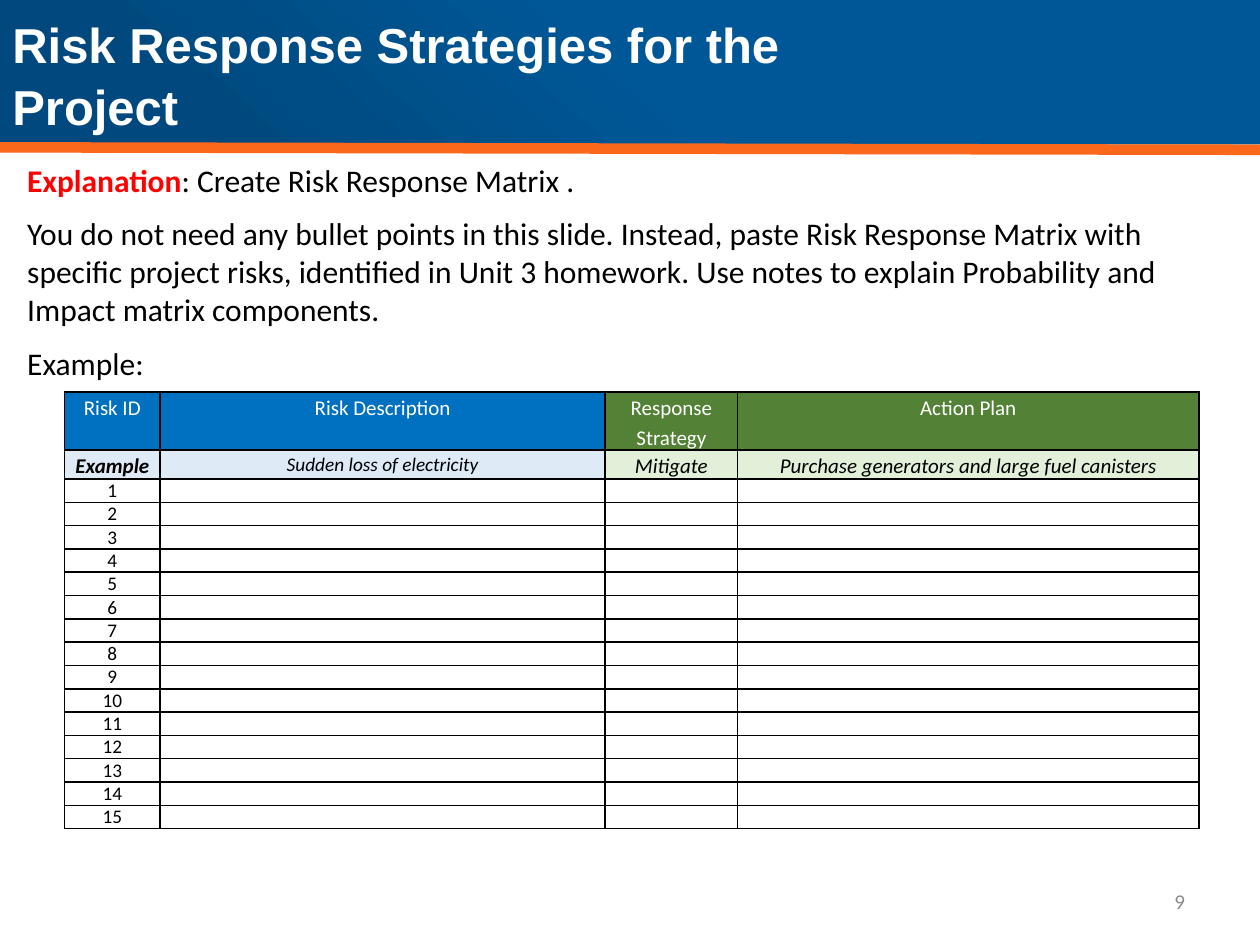
from lxml import etree
from pptx import Presentation
from pptx.dml.color import RGBColor
from pptx.enum import shapes, text
from pptx.oxml import parse_xml
from pptx.oxml.ns import qn
from pptx.util import Cm, Pt

WHITE = RGBColor(0xFF, 0xFF, 0xFF)
BLACK = RGBColor(0, 0, 0)
RED = RGBColor(0xFF, 0, 0)
GRAY = RGBColor(0x8C, 0x8C, 0x8C)
ORANGE = RGBColor(0xFB, 0x68, 0x1B)
NAVY = RGBColor(0x00, 0x57, 0x97)
DEEP = RGBColor(0x00, 0x48, 0x7D)
BLUE = RGBColor(0x00, 0x70, 0xC0)
GREEN = RGBColor(0x53, 0x81, 0x35)
SKY = RGBColor(0xDE, 0xEA, 0xF6)
MINT = RGBColor(0xE2, 0xEF, 0xD9)
NS = 'xmlns:a="http://schemas.openxmlformats.org/drawingml/2006/main"'


def style(font, size, color, bold=False, italic=False, name="Calibri"):
    font.name, font.size = name, Pt(size)
    font.bold, font.italic = bold, italic
    font.color.rgb = color


def add_box(left, top, width, height, anchor):
    box = slide.shapes.add_textbox(Cm(left), Cm(top), Cm(width), Cm(height))
    frame = box.text_frame
    frame.word_wrap = True
    frame.vertical_anchor = anchor
    return frame


prs = Presentation()
prs.slide_width, prs.slide_height = Cm(25.4), Cm(19.05)
slide = prs.slides.add_slide(prs.slide_layouts[6])

band = slide.shapes.add_shape(shapes.MSO_SHAPE.RECTANGLE, 0, 0, Cm(25.4), Cm(2.9))
band.line.fill.background()
band.fill.solid()
stops = "".join(
    f'<a:gs pos="{pos * 1000}"><a:srgbClr val="{tone}"/></a:gs>'
    for pos, tone in ((0, NAVY), (49, NAVY), (85, DEEP))
)
props = band.element.spPr
props.replace(props.find(qn("a:solidFill")), parse_xml(
    f'<a:gradFill {NS}><a:gsLst>{stops}</a:gsLst>'
    f'<a:lin ang="{131 * 60000}" scaled="0"/></a:gradFill>'))
props.append(parse_xml(
    f'<a:effectLst {NS}><a:outerShdw blurRad="{Pt(3.1)}" dist="{Pt(1.8)}" dir="5400000" '
    f'rotWithShape="0"><a:srgbClr val="{BLACK}"><a:alpha val="35000"/></a:srgbClr>'
    f'</a:outerShdw></a:effectLst>'))

rule = slide.shapes.add_connector(
    shapes.MSO_CONNECTOR.STRAIGHT, 0, Cm(2.97), Cm(25.4), Cm(3.02))
rule.line.color.rgb = ORANGE
rule.line.width = Pt(6)
etree.SubElement(rule.element.spPr, qn("a:effectLst"))

title = add_box(0, 0, 19.25, 2.97, text.MSO_ANCHOR.MIDDLE).paragraphs[0]
title.text = "Risk Response Strategies for the Project"
title.line_spacing = 1.05
style(title.font, 28, WHITE, bold=True, name="Arial")

num = add_box(18.21, 17.65, 5.93, 1.02, text.MSO_ANCHOR.MIDDLE).paragraphs[0]
num.text = "9"
num.alignment = text.PP_ALIGN.RIGHT
style(num.font, 12, GRAY)

body = add_box(0.3, 3.12, 24.82, 5.84, text.MSO_ANCHOR.TOP)
lead = body.paragraphs[0]
for words, color, bold in (
    ("Explanation", RED, True),
    (": Create Risk Response Matrix .", BLACK, False),
):
    run = lead.add_run()
    run.text = words
    style(run.font, 18, color, bold)
for words in (
    "You do not need any bullet points in this slide. Instead, paste Risk Response Matrix "
    "with specific project risks, identified in Unit 3 homework. Use notes to explain "
    "Probability and Impact matrix components.",
    "Example:",
):
    para = body.add_paragraph()
    para.text = words
    para.space_before = Pt(9)
    style(para.font, 18, BLACK)

rows = [
    ("Risk ID", "Risk Description", "Response Strategy", "Action Plan"),
    ("Example", "Sudden loss of electricity", "Mitigate",
     "Purchase generators and large fuel canisters"),
] + [(str(n), "", "", "") for n in range(1, 16)]
fills = [(BLUE, BLUE, GREEN, GREEN), (SKY, SKY, MINT, MINT)]
tall = [1.17, 0.58] + [0.47] * 15
wide = [1.93, 8.97, 2.67, 9.3]

table = slide.shapes.add_table(
    len(rows), len(wide), Cm(1.3), Cm(7.9), Cm(sum(wide)), Cm(sum(tall))).table
table.first_row = table.horz_banding = False
look = table._tbl.tblPr
look.remove(look.find(qn("a:tableStyleId")))
for col, width in zip(table.columns, wide):
    col.width = Cm(width)
for r, row in enumerate(rows):
    table.rows[r].height = Cm(tall[r])
    for c, words in enumerate(row):
        cell = table.cell(r, c)
        cell.margin_left = cell.margin_right = Cm(0.18)
        cell.margin_top = cell.margin_bottom = 0
        para = cell.text_frame.paragraphs[0]
        para.text = words
        para.alignment = text.PP_ALIGN.CENTER
        size = 11 if r > 1 or (r, c) == (1, 1) else 12
        style(para.font, size, BLACK if r else WHITE, (r, c) == (1, 0), r == 1)
        if not words:
            etree.SubElement(para._p, qn("a:endParaRPr"), sz=str(size * 100))
        if r < 2:
            para.line_spacing = 1.15
            para.space_after = Pt(10)
            cell.fill.solid()
            cell.fill.fore_color.rgb = fills[r][c]
        else:
            cell.fill.background()
        for i, side in enumerate("LRTB"):
            cell._tc.tcPr.insert(i, parse_xml(
                f'<a:ln{side} {NS} w="{Pt(1)}"><a:solidFill><a:srgbClr val="{BLACK}"/>'
                f'</a:solidFill></a:ln{side}>'))

prs.save("out.pptx")
